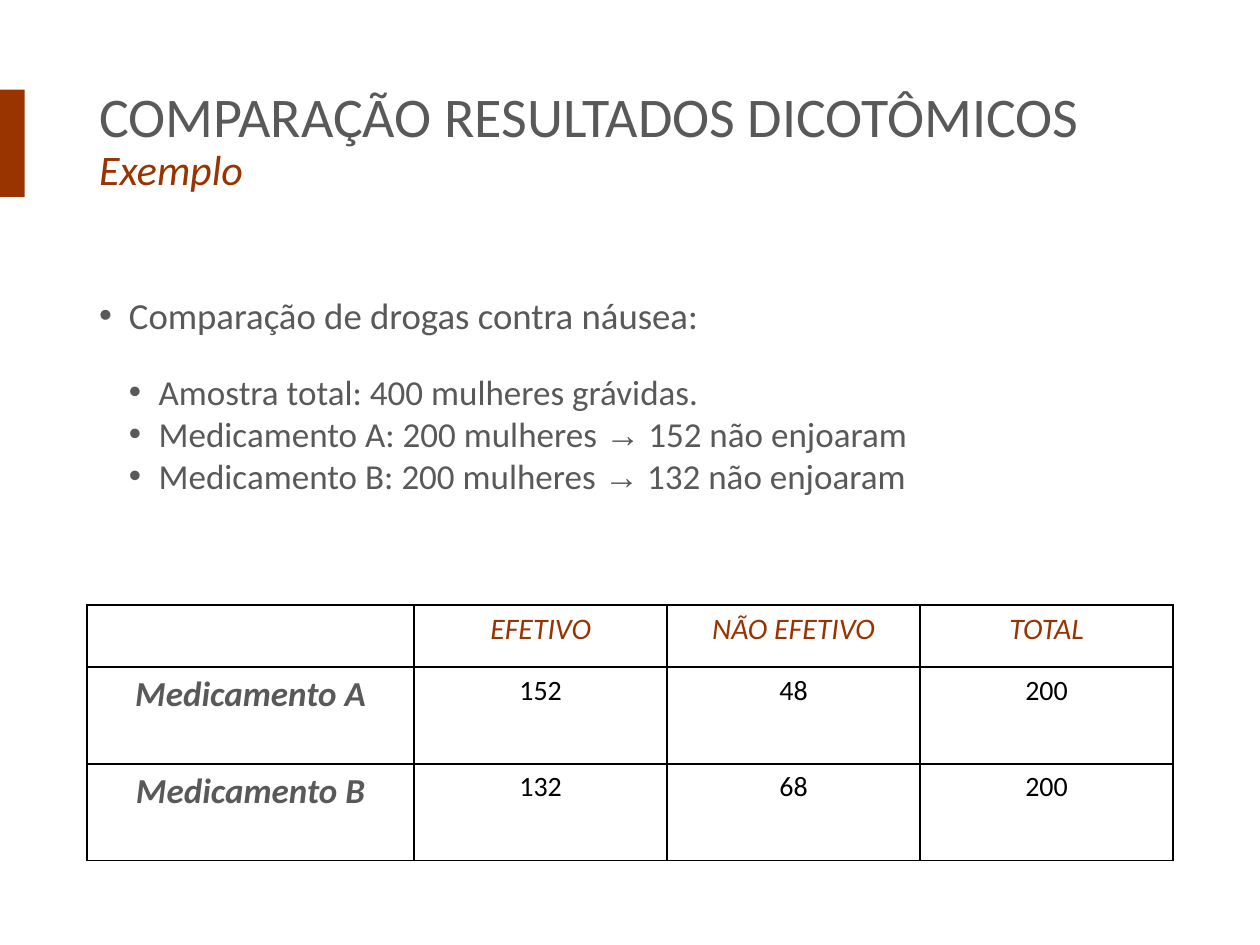
from dataclasses import dataclass

from lxml import etree
from pptx import Presentation
from pptx import util as u
from pptx.dml.color import RGBColor
from pptx.enum import shapes, text
from pptx.oxml import ns

RUST, GRAY, BLACK = "993300", "595959", "000000"
LEFT, WIDTH = u.Cm(1.75), u.Cm(21.9)


@dataclass(frozen=True)
class Style:
    size: float
    color: str
    bold: bool = False
    italic: bool = False
    font: str = "Calibri"


@dataclass(frozen=True)
class Bullet:
    pieces: tuple
    level: int = 0
    space_before: float = 0
    line_spacing: float = 1.0


TITLE = Style(32, GRAY)
SUBTITLE = Style(24, RUST, italic=True)
TOPIC = Style(21, GRAY)
DETAIL = Style(20, GRAY)
ARROW = Style(20, GRAY, font="Arial")
HEADER = Style(17, RUST, italic=True)
ROW_LABEL = Style(20, GRAY, bold=True, italic=True)
VALUE = Style(16, BLACK)


def rgb(value: str) -> RGBColor:
    return RGBColor.from_string(value)


def write(paragraph, *pieces: tuple) -> None:
    """Fill a paragraph with (wording, style) pieces."""
    paragraph.text = pieces[0][0]
    for wording, _ in pieces[1:]:
        paragraph.add_run().text = wording
    for run, (_, style) in zip(paragraph.runs, pieces):
        font = run.font
        font.name, font.size = style.font, u.Pt(style.size)
        font.bold, font.italic = style.bold, style.italic
        font.color.rgb = rgb(style.color)


def add_text_frame(slide, top: int, height: int):
    text_frame = slide.shapes.add_textbox(LEFT, top, WIDTH, height).text_frame
    text_frame.word_wrap = True
    return text_frame


def write_bullet(paragraph, bullet: Bullet) -> None:
    write(paragraph, *bullet.pieces)
    paragraph.level = bullet.level
    paragraph.space_before = u.Pt(bullet.space_before)
    paragraph.line_spacing = bullet.line_spacing
    properties = paragraph._p.get_or_add_pPr()
    properties.set("marL", str(u.Cm(0.6 * (bullet.level + 1))))
    properties.set("indent", str(-u.Cm(0.6)))
    etree.SubElement(properties, ns.qn("a:buFont"), typeface="Arial")
    etree.SubElement(properties, ns.qn("a:buChar"), char="•")


def add_borders(cell) -> None:
    properties = cell._tc.get_or_add_tcPr()
    for side in ("lnL", "lnR", "lnT", "lnB"):
        line = etree.SubElement(properties, ns.qn(f"a:{side}"), w=str(u.Pt(1)))
        fill = etree.SubElement(line, ns.qn("a:solidFill"))
        etree.SubElement(fill, ns.qn("a:srgbClr"), val=BLACK)


def add_results_table(slide, rows: list) -> None:
    column_widths = [u.Cm(6.6)] + [u.Cm(5.1)] * 3
    row_heights = [u.Cm(1.25)] + [u.Cm(1.95)] * 2
    table = slide.shapes.add_table(
        len(rows), len(column_widths), LEFT, u.Cm(12.2), WIDTH, sum(row_heights)
    ).table
    table.first_row = table.horz_banding = False
    for column, width in zip(table.columns, column_widths):
        column.width = width
    for row, height in zip(table.rows, row_heights):
        row.height = height
    for row_index, values in enumerate(rows):
        for column_index, value in enumerate(values):
            cell = table.cell(row_index, column_index)
            add_borders(cell)
            cell.fill.background()
            if not value:
                continue
            style = HEADER if row_index == 0 else VALUE if column_index else ROW_LABEL
            paragraph = cell.text_frame.paragraphs[0]
            write(paragraph, (value, style))
            paragraph.alignment = text.PP_ALIGN.CENTER


def medicine_bullet(name: str, unaffected: int) -> Bullet:
    return Bullet((
        (f"Medicamento {name}: 200 mulheres ", DETAIL),
        ("→", ARROW),
        (f" {unaffected} não enjoaram", DETAIL),
    ), level=1)


def main() -> None:
    presentation = Presentation()
    presentation.slide_width, presentation.slide_height = u.Cm(25.4), u.Cm(19.05)
    slide = presentation.slides.add_slide(presentation.slide_layouts[6])

    # Bulleted example
    bullets = [
        Bullet((("Comparação de drogas contra náusea:", TOPIC),), line_spacing=0.9),
        Bullet((("Amostra total: 400 mulheres grávidas.", DETAIL),), 1, 19),
        medicine_bullet("A", 152),
        medicine_bullet("B", 132),
    ]
    body = add_text_frame(slide, u.Cm(5.08), u.Cm(12.09))
    body.margin_top = u.Cm(0.92)
    for index, bullet in enumerate(bullets):
        paragraph = body.add_paragraph() if index else body.paragraphs[0]
        write_bullet(paragraph, bullet)

    # Results table
    add_results_table(slide, [
        ["", "EFETIVO", "NÃO EFETIVO", "TOTAL"],
        ["Medicamento A", "152", "48", "200"],
        ["Medicamento B", "132", "68", "200"],
    ])

    # Accent bar
    bar = slide.shapes.add_shape(
        shapes.MSO_SHAPE.RECTANGLE, 0, u.Cm(1.81), u.Cm(0.5), u.Cm(2.16)
    )
    bar.shadow.inherit = False
    bar.fill.solid()
    bar.fill.fore_color.rgb = rgb(RUST)
    bar.line.fill.background()

    # Title
    title = add_text_frame(slide, u.Cm(1.02), u.Cm(3.68))
    title.vertical_anchor = text.MSO_ANCHOR.MIDDLE
    heading = title.paragraphs[0]
    write(heading, ("COMPARAÇÃO RESULTADOS DICOTÔMICOS ", TITLE), ("Exemplo", SUBTITLE))
    heading.line_spacing = 0.9

    presentation.save("out.pptx")


if __name__ == "__main__":
    main()
